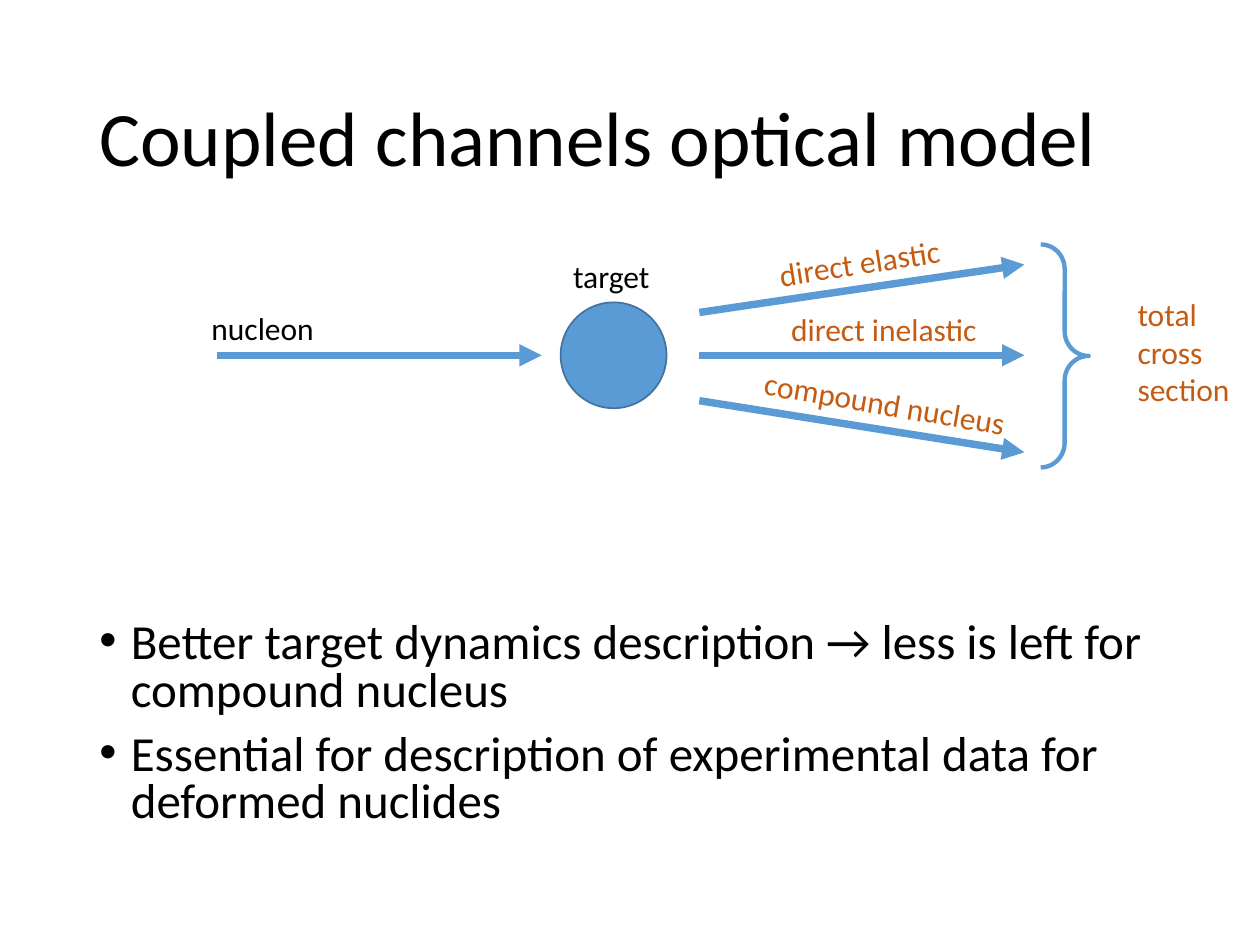
from pptx import Presentation
from pptx.dml.color import RGBColor
from pptx.enum.shapes import MSO_CONNECTOR, MSO_SHAPE
from pptx.enum.text import MSO_ANCHOR, MSO_AUTO_SIZE
from pptx.oxml.ns import qn
from pptx.util import Inches, Pt
from lxml import etree

LINE = MSO_CONNECTOR.STRAIGHT
OVAL = MSO_SHAPE.OVAL
BRACE = MSO_SHAPE.RIGHT_BRACE
MIDDLE = MSO_ANCHOR.MIDDLE
TOP = MSO_ANCHOR.TOP
GROW = MSO_AUTO_SIZE.SHAPE_TO_FIT_TEXT
FIXED = MSO_AUTO_SIZE.NONE

BLACK = RGBColor(0x00, 0x00, 0x00)
BLUE = RGBColor(0x5B, 0x9B, 0xD5)
NAVY = RGBColor(0x43, 0x73, 0x9E)
RUST = RGBColor(0xC5, 0x5A, 0x11)

TITLE = "Coupled channels optical model"
POINTS = [
    "Better target dynamics description → less is left for compound nucleus",
    "Essential for description of experimental data for deformed nuclides",
]
# Rise of the arrow at its start and end, then label, label box and turn
CHANNELS = [
    (-0.34, -0.72, "direct elastic", (0.53, -0.94, 1.52, 0.4), -8.8),
    (0, 0, "direct inelastic", (0.63, -0.41, 1.69, 0.4), 0),
    (0.36, 0.77, "compound nucleus", (0.41, 0.18, 2.15, 0.4), 9.6),
]
REACH = 2.58


def add_text(slide, box, lines, size, color=BLACK, frame=None, para=None):
    shape = slide.shapes.add_textbox(*map(Inches, box))
    text = shape.text_frame
    text.text = "\n".join(lines)
    for key, value in (frame or {}).items():
        setattr(text, key, value)
    for item in text.paragraphs:
        for key, value in (para or {}).items():
            setattr(item, key, value)
        font = item.runs[0].font
        font.name, font.size = "Calibri", Pt(size)
        font.color.rgb = color
    return shape


def add_label(slide, box, lines, color=BLACK, turn=0):
    frame = {"word_wrap": False, "auto_size": GROW}
    shape = add_text(slide, box, lines, 18, color, frame)
    shape.rotation = turn


def add_arrow(slide, left, start, end):
    ends = map(Inches, (left, start, left + REACH, end))
    arrow = slide.shapes.add_connector(LINE, *ends)
    arrow.line.color.rgb = BLUE
    arrow.line.width = Pt(4.25)
    head = etree.SubElement(arrow.line._get_or_add_ln(), qn("a:tailEnd"))
    head.set("type", "triangle")
    etree.SubElement(arrow._element.spPr, qn("a:effectLst"))


def add_shape(slide, kind, box, color, width):
    shape = slide.shapes.add_shape(kind, *map(Inches, box))
    shape.shadow.inherit = False
    shape.line.color.rgb = color
    shape.line.width = Pt(width)
    return shape


def add_title(slide, box):
    frame = {"word_wrap": True, "auto_size": FIXED, "vertical_anchor": MIDDLE}
    add_text(slide, box, [TITLE], 44, frame=frame, para={"line_spacing": 0.9})


def add_beam(slide, left, axis):
    """Draw the nucleon flying along the axis into the target."""
    add_arrow(slide, left, axis, axis)
    add_label(slide, (left - 0.14, axis - 0.42, 1.03, 0.4), ["nucleon"])
    ball = add_shape(slide, OVAL, (left + 2.73, axis - 0.42, 0.84, 0.84), NAVY, 1)
    ball.fill.solid()
    ball.fill.fore_color.rgb = BLUE
    add_label(slide, (left + 2.73, axis - 0.83, 0.81, 0.4), ["target"])


def add_channels(slide, left, axis):
    """Draw the outgoing channels and the brace that sums them."""
    for start, end, name, (x, y, wide, high), turn in CHANNELS:
        add_arrow(slide, left, axis + start, axis + end)
        add_label(slide, (left + x, axis + y, wide, high), [name], RUST, turn)
    brace = add_shape(slide, BRACE, (left + 2.71, axis - 0.88, 0.38, 1.77), BLUE, 2.5)
    brace.fill.background()
    brace.adjustments[0] = 0.517
    brace.adjustments[1] = 0.5
    add_label(slide, (left + 3.38, axis - 0.53, 0.94, 1.01),
              ["total", "cross", "section"], RUST)


def add_points(slide, box):
    frame = {"word_wrap": True, "auto_size": FIXED, "vertical_anchor": TOP}
    para = {"line_spacing": 0.8, "space_before": Pt(10)}
    shape = add_text(slide, box, POINTS, 28, frame=frame, para=para)
    for item in shape.text_frame.paragraphs:
        props = item._p.get_or_add_pPr()
        props.set("marL", str(Inches(0.25)))
        props.set("indent", str(-Inches(0.25)))
        etree.SubElement(props, qn("a:buFont")).set("typeface", "Arial")
        etree.SubElement(props, qn("a:buChar")).set("char", "•")


def main():
    deck = Presentation()
    deck.slide_width, deck.slide_height = Inches(10), Inches(7.5)
    slide = deck.slides.add_slide(deck.slide_layouts[6])
    add_title(slide, (0.69, 0.4, 8.62, 1.45))
    add_points(slide, (0.69, 4.89, 8.62, 1.87))
    add_beam(slide, 1.72, 2.82)
    add_channels(slide, 5.55, 2.82)
    deck.save("out.pptx")


if __name__ == "__main__":
    main()
